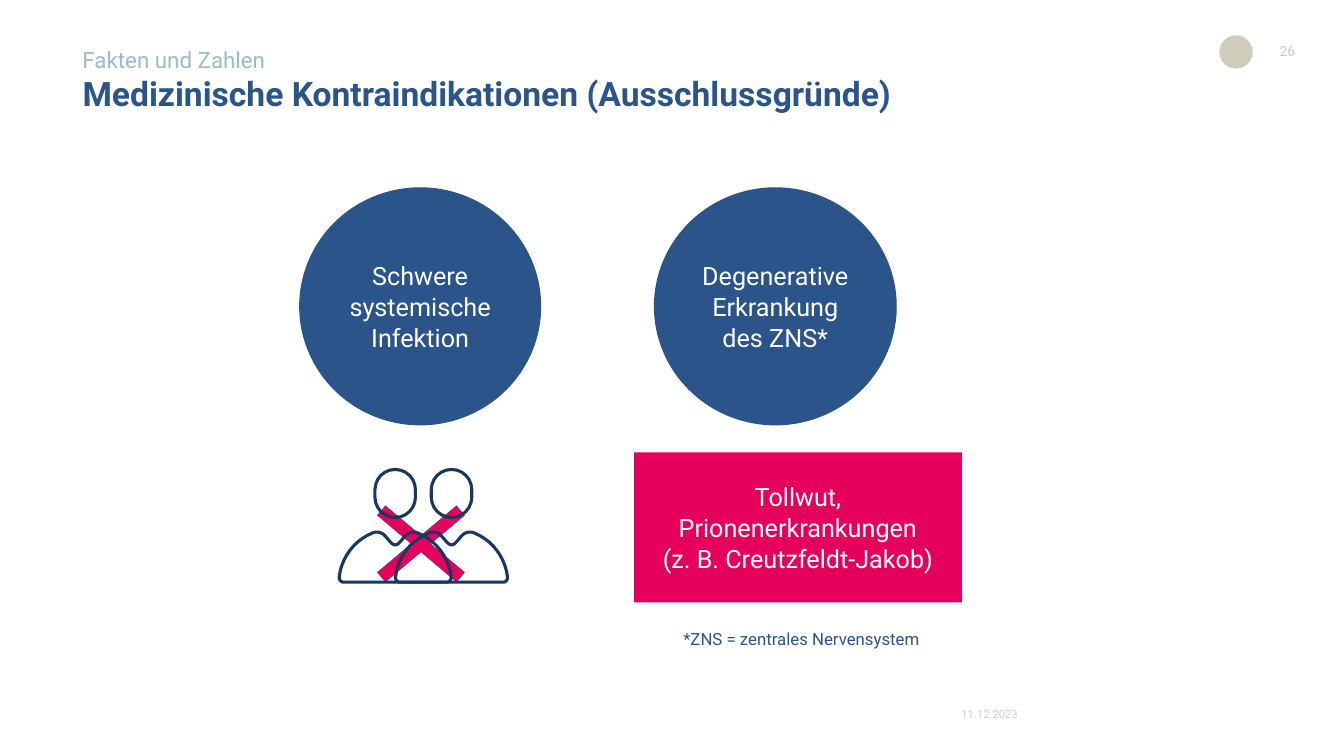
from pptx import Presentation
from pptx.dml.color import RGBColor
from pptx.enum.shapes import MSO_SHAPE
from pptx.enum.text import MSO_ANCHOR, PP_ALIGN
from pptx.util import Cm, Pt

OVAL, NODE = MSO_SHAPE.OVAL, MSO_SHAPE.FLOWCHART_CONNECTOR
RECT, ROUND, CROSS = (MSO_SHAPE.RECTANGLE, MSO_SHAPE.ROUNDED_RECTANGLE,
                      MSO_SHAPE.MATH_MULTIPLY)
LEFT, MID, RIGHT = PP_ALIGN.LEFT, PP_ALIGN.CENTER, PP_ALIGN.RIGHT
TOP, CENTER = MSO_ANCHOR.TOP, MSO_ANCHOR.MIDDLE

FONT = "Roboto"
COLORS = {"blue": "2A548A", "navy": "183761", "pink": "E5005C",
          "teal": "9BBDC5", "sand": "D1CDBD", "white": "FFFFFF"}

# Boxes are left, top, width, height in cm
TITLE = "Medizinische Kontraindikationen (Ausschlussgründe)"
TITLE_BOX = (2.08, 1.83, 29.72, 1.12)
LABELS = [
    ("Fakten und Zahlen", (2.08, 1.17, 14.45, 0.64), 16, "teal", LEFT),
    ("26", (31.8, 1.07, 0.84, 0.38), 10, "sand", RIGHT),
    ("11.12.2023", (24.23, 17.83, 1.83, 0.51), 8, "sand", LEFT),
    ("*ZNS = zentrales Nervensystem", (17.22, 15.85, 9.09, 0.86), 12, "blue", LEFT),
]
PANELS = [
    ("Schwere systemische Infektion", NODE, (7.54, 4.72, 6.1, 6), "blue"),
    ("Degenerative Erkrankung des ZNS*", NODE, (16.48, 4.72, 6.12, 6), "blue"),
    ("Tollwut,\vPrionenerkrankungen\v(z. B. Creutzfeldt-Jakob)", RECT,
     (15.98, 11.4, 8.26, 3.78), "pink"),
]
BADGE_BOX = (30.73, 0.89, 0.84, 0.84)
CROSS_BOX = (8.69, 12.09, 3.84, 3.23)
PEOPLE = [11.38, 9.96]  # middle axis of each person
PEOPLE_TOP = 11.79
HEAD = (1.02, 1.21)
STROKE = 2.2
# Half of a torso: Bézier curves from the base to the neck, from the axis
BASE = (1.3, 2.88)
TORSO = [
    ((1.37, 2.88), (1.42, 2.82), (1.41, 2.74)),
    ((1.35, 2.26), (1.04, 1.83), (0.57, 1.64)),
    ((0.46, 1.59), (0.33, 1.63), (0.27, 1.7)),
    ((0.21, 1.76), (0.16, 1.83), (0.1, 1.89)),
    ((0.07, 1.92), (0.04, 1.94), (0, 1.94)),
]
STEPS = 10


def rgb(name):
    return RGBColor.from_string(COLORS[name])


def write(shape, text, size=18, color="white", align=LEFT, anchor=TOP,
          bold=False, pad=(0, 0), line=None):
    frame = shape.text_frame
    frame.word_wrap = True
    frame.vertical_anchor = anchor
    frame.margin_left = frame.margin_right = Cm(pad[0])
    frame.margin_top = frame.margin_bottom = Cm(pad[1])
    frame.text = text
    para = frame.paragraphs[0]
    para.alignment = align
    para.space_before = Pt(0)
    if line:
        para.line_spacing = Pt(line)
    font = para.font
    font.name, font.size, font.bold = FONT, Pt(size), bold
    font.color.rgb = rgb(color)


def paint(shape, fill=None, edge=None, width=0):
    shape.shadow.inherit = False
    if fill:
        shape.fill.solid()
        shape.fill.fore_color.rgb = rgb(fill)
    else:
        shape.fill.background()
    if edge:
        shape.line.color.rgb = rgb(edge)
        shape.line.width = Pt(width)
    else:
        shape.line.fill.background()


def add(shapes, kind, box, **look):
    shape = shapes.add_shape(kind, *map(Cm, box))
    paint(shape, **look)
    return shape


def trace(start, curves):
    """Return points along a chain of cubic Bézier curves."""
    points = [start]
    for a, b, c in curves:
        p = points[-1]
        for i in range(1, STEPS + 1):
            t = i / STEPS
            u = 1 - t
            points.append(tuple(
                u**3 * p[k] + 3 * u * u * t * a[k] + 3 * u * t * t * b[k] + t**3 * c[k]
                for k in (0, 1)))
    return points


def person(shapes, axis):
    half = trace(BASE, TORSO)
    whole = half + [(-x, y) for x, y in reversed(half[:-1])]
    points = [(Cm(axis + x), Cm(PEOPLE_TOP + y)) for x, y in whole]
    pen = shapes.build_freeform(*points[0])
    pen.add_line_segments(points[1:], close=True)
    paint(pen.convert_to_shape(), edge="navy", width=STROKE)
    wide, high = HEAD
    head = add(shapes, ROUND, (axis - wide / 2, PEOPLE_TOP + 0.04, wide, high),
               edge="navy", width=STROKE)
    head.adjustments[0] = 0.5


def main():
    deck = Presentation()
    deck.slide_width, deck.slide_height = Cm(33.87), Cm(19.05)
    slide = deck.slides.add_slide(deck.slide_layouts[5])
    shapes = slide.shapes

    title = shapes.title
    title.left, title.top, title.width, title.height = map(Cm, TITLE_BOX)
    write(title, TITLE, size=24, color="blue", bold=True)

    add(shapes, OVAL, BADGE_BOX, fill="sand")
    for text, box, size, color, align in LABELS:
        label = shapes.add_textbox(*map(Cm, box))
        write(label, text, size=size, color=color, align=align)

    cross = add(shapes, CROSS, CROSS_BOX, fill="pink", edge="blue", width=0.25)
    cross.adjustments[0] = 0.098
    for text, kind, box, fill in PANELS:
        panel = add(shapes, kind, box, fill=fill)
        write(panel, text, align=MID, anchor=CENTER, pad=(0.25, 0.13), line=22)
    for axis in PEOPLE:
        person(shapes, axis)

    deck.save("out.pptx")


if __name__ == "__main__":
    main()
